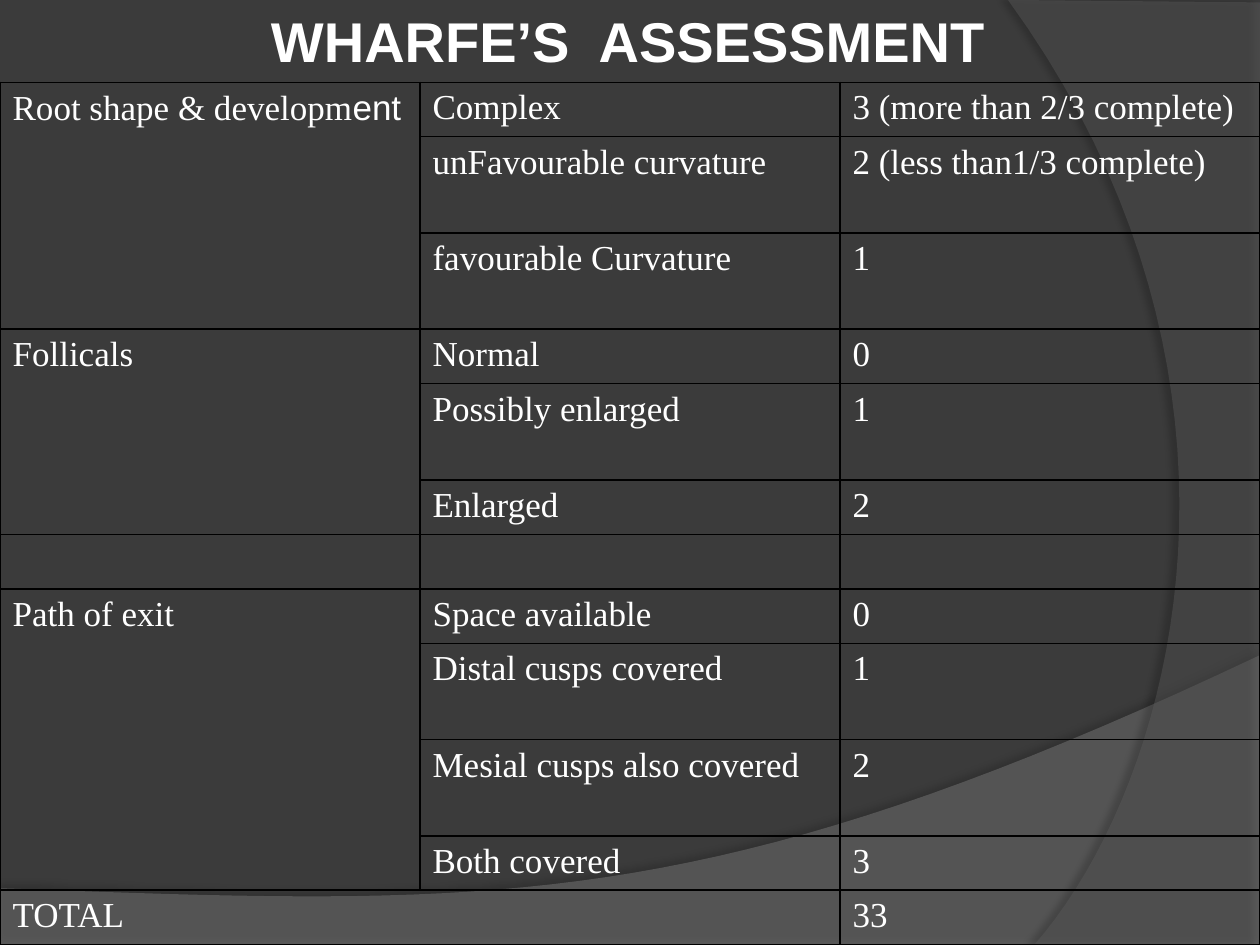
from lxml import etree
from pptx import Presentation
from pptx.dml.color import RGBColor
from pptx.enum.text import PP_ALIGN
from pptx.oxml.ns import qn
from pptx.util import Pt

CENTER = PP_ALIGN.CENTER
COLORS = {
    "background": "3B3B3B",
    "wave": "7F7F7F",
    "arc": "5E5E5E",
    "text": "FFFFFF",
    "line": "000000",
}
SERIF, SANS = "Times New Roman", "Arial"
WIDTH, HEIGHT = 720, 540
SHORT, TALL = 31.15, 55

# Each group: heading as (text, font) spans, then (finding, score, row height)
GROUPS = [
    ([("Root shape & developm", SERIF), ("ent", SANS)], [
        ("Complex", "3 (more than 2/3 complete)", SHORT),
        ("unFavourable curvature", "2 (less than1/3 complete)", TALL),
        ("favourable Curvature", "1", TALL),
    ]),
    ([("Follicals", SERIF)], [
        ("Normal", "0", SHORT),
        ("Possibly enlarged", "1", TALL),
        ("Enlarged", "2", SHORT),
    ]),
    ([], [("", "", SHORT)]),
    ([("Path of exit", SERIF)], [
        ("Space available", "0", SHORT),
        ("Distal cusps covered", "1", TALL),
        ("Mesial cusps also covered", "2", TALL),
        ("Both covered", "3", SHORT),
    ]),
    ([("TOTAL", SERIF)], [("", "33", SHORT)]),
]


def rgb(name):
    return RGBColor.from_string(COLORS[name])


def add_color(parent, name, alpha=None):
    color = etree.SubElement(parent, qn("a:srgbClr"), val=COLORS[name])
    if alpha is not None:
        etree.SubElement(color, qn("a:alpha"), val=str(alpha * 1000))


def style_font(font, size, name, bold=False):
    font.size, font.name, font.bold = Pt(size), name, bold
    font.color.rgb = rgb("text")


def curve(start, control1, control2, end, steps=40):
    """Points along a cubic Bezier curve."""
    points = []
    for step in range(steps + 1):
        t = step / steps
        weights = ((1 - t) ** 3, 3 * t * (1 - t) ** 2, 3 * t * t * (1 - t), t ** 3)
        points.append(tuple(
            sum(w * p[axis] for w, p in zip(weights, (start, control1, control2, end)))
            for axis in (0, 1)))
    return points


def add_swoosh(page, points, color, alpha, shadow_alpha, shadow_distance, direction):
    outline = [(Pt(x), Pt(y)) for x, y in points]
    builder = page.shapes.build_freeform(*outline[0])
    builder.add_line_segments(outline[1:], close=True)
    shape = builder.convert_to_shape()
    shape.line.fill.background()
    shape.fill.solid()
    shape.fill.fore_color.rgb = rgb(color)
    fill_color = shape.fill._xPr.find(qn("a:solidFill"))[0]
    etree.SubElement(fill_color, qn("a:alpha"), val=str(alpha * 1000))
    # Soft shadow along the curved edge
    shape.shadow.inherit = False
    effects = shape._element.spPr.find(qn("a:effectLst"))
    shadow = etree.SubElement(
        effects, qn("a:outerShdw"), blurRad=str(Pt(4)),
        dist=str(Pt(shadow_distance)), dir=str(direction * 60000),
        algn="ctr", rotWithShape="0")
    add_color(shadow, "line", shadow_alpha)


def add_title(page, text):
    box = page.shapes.add_textbox(Pt(48), Pt(0), Pt(588), Pt(46))
    frame = box.text_frame
    frame.word_wrap = True
    frame.margin_left = Pt(41)
    para = frame.paragraphs[0]
    para.text, para.alignment = text, CENTER
    style_font(para.font, 32, SANS, bold=True)


def style_cell(cell):
    cell.fill.background()
    properties = cell._tc.get_or_add_tcPr()
    for index, side in enumerate(("lnL", "lnR", "lnT", "lnB")):
        border = etree.Element(qn(f"a:{side}"), w=str(Pt(1)))
        add_color(etree.SubElement(border, qn("a:solidFill")), "line")
        properties.insert(index, border)


def write_cell(cell, spans):
    para = cell.text_frame.paragraphs[0]
    style_font(para.font, 20, SERIF)
    for text, font_name in spans:
        span = para.add_run()
        span.text = text
        if font_name != SERIF:
            span.font.name = font_name


def add_score_table(page):
    count = sum(len(rows) for _, rows in GROUPS)
    frame = page.shapes.add_table(count, 3, Pt(0), Pt(47), Pt(WIDTH), Pt(493))
    table = frame.table
    table.first_row = table.horz_banding = False
    for column in table.columns:
        column.width = Pt(WIDTH / 3)
    for cell in table.iter_cells():
        style_cell(cell)

    top = 0
    for heading, rows in GROUPS:
        write_cell(table.cell(top, 0), heading)
        for row, (finding, score, height) in enumerate(rows, top):
            table.rows[row].height = Pt(height)
            for column, text in ((1, finding), (2, score)):
                write_cell(table.cell(row, column), [(text, SERIF)] if text else [])
        bottom = top + len(rows) - 1
        if bottom > top:
            table.cell(top, 0).merge(table.cell(bottom, 0))
        top = bottom + 1
    # The total label runs across the first two columns
    table.cell(count - 1, 0).merge(table.cell(count - 1, 1))


def main():
    deck = Presentation()
    deck.slide_width, deck.slide_height = Pt(WIDTH), Pt(HEIGHT)
    page = deck.slides.add_slide(deck.slide_layouts[6])
    page.background.fill.solid()
    page.background.fill.fore_color.rgb = rgb("background")

    # Backdrop
    wave = [(0, HEIGHT), (WIDTH, HEIGHT)] + curve(
        (WIDTH, 374.4), (402.5, 524.9), (281.5, 517.7), (0, 507.6))
    add_swoosh(page, wave, "wave", 45, 35, 3.5, 270)
    arc = [(WIDTH, 1.4), (WIDTH, HEIGHT)] + curve(
        (591, HEIGHT), (673.2, 445.7), (733, 216), (576, 0))
    add_swoosh(page, arc, "arc", 40, 45, 4, 180)

    # Content
    add_score_table(page)
    add_title(page, "WHARFE’S  ASSESSMENT")
    deck.save("out.pptx")


if __name__ == "__main__":
    main()
